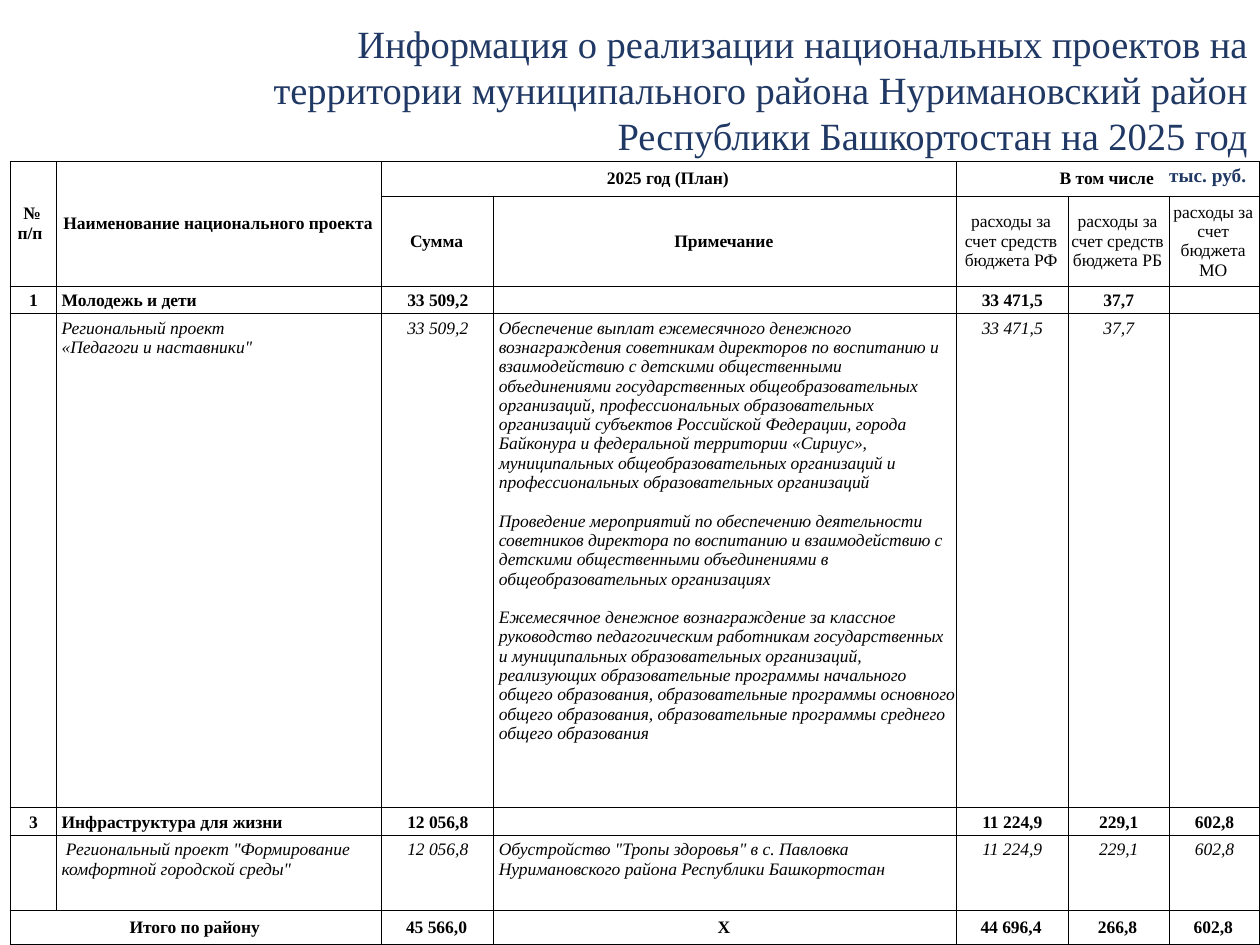
import pptx
import pptx.dml.color
import pptx.enum.text
import pptx.util
from lxml import etree
from pptx.util import Inches

Align = pptx.enum.text.PP_ALIGN
Anchor = pptx.enum.text.MSO_ANCHOR
NAMESPACE = "http://schemas.openxmlformats.org/drawingml/2006/main"

COLUMNS = [0.37, 2.58, 0.89, 3.67, 0.89, 0.8, 0.72]
ROWS = [0.28, 0.71, 0.22, 3.92, 0.22, 0.6, 0.27]
LEFT_COLUMNS = (1, 3)
# Merged areas: top row, left column, bottom row, right column
MERGES = [(0, 0, 1, 0), (0, 1, 1, 1), (0, 2, 0, 3), (0, 4, 0, 6), (6, 0, 6, 1)]

PAYMENT_NOTES = [
    "Обеспечение выплат ежемесячного денежного вознаграждения советникам директоров "
    "по воспитанию и взаимодействию с детскими общественными объединениями "
    "государственных общеобразовательных организаций, профессиональных "
    "образовательных организаций субъектов Российской Федерации, города Байконура и "
    "федеральной территории «Сириус», муниципальных общеобразовательных организаций "
    "и профессиональных образовательных организаций",
    "Проведение мероприятий по обеспечению деятельности советников директора по "
    "воспитанию и взаимодействию с детскими общественными объединениями в "
    "общеобразовательных организациях",
    "Ежемесячное денежное вознаграждение за классное руководство педагогическим "
    "работникам государственных и муниципальных образовательных организаций, "
    "реализующих образовательные программы начального общего образования, "
    "образовательные программы основного общего образования, образовательные "
    "программы среднего общего образования",
]

# Each row: kind, then the cells; a list holds several paragraphs
TABLE = [
    ("head", ["№ п/п ", "Наименование национального проекта", "2025 год (План)", "",
              "В том числе", "", ""]),
    ("head", ["", "", "Сумма", "Примечание", "расходы за счет средств бюджета РФ",
              "расходы за счет средств бюджета РБ", "расходы за счет бюджета\vМО"]),
    ("project", ["1", "Молодежь и дети", "33 509,2", "", "33 471,5", "37,7", ""]),
    ("detail", ["", ["Региональный проект", "«Педагоги и наставники\""], "33 509,2",
                PAYMENT_NOTES, "33 471,5", "37,7", ""]),
    ("project", ["3", "Инфраструктура для жизни", "12 056,8", "", "11 224,9",
                 "229,1", "602,8"]),
    ("detail", ["", " Региональный проект \"Формирование комфортной городской среды\"",
                "12 056,8",
                "Обустройство \"Тропы здоровья\" в с. Павловка Нуримановского района "
                "Республики Башкортостан", "11 224,9", "229,1", "602,8"]),
    ("total", ["Итого по району", "", "45 566,0", "Х", "44 696,4", "266,8", "602,8"]),
]


def color(value):
    return pptx.dml.color.RGBColor.from_string(value)


class SlideBuilder:
    font_name = "Times New Roman"
    accent = "203864"
    ink = "000000"
    table_size = 10

    def __init__(self, page):
        self.page = page

    def style(self, para, size, tint, bold=False, italic=False):
        font = para.font
        font.name, font.size = self.font_name, pptx.util.Pt(size)
        font.bold, font.italic = bold, italic
        font.color.rgb = color(tint)

    def text(self, left, top, width, height, words, size, align, bold=False, wrap=True):
        box = self.page.shapes.add_textbox(*map(Inches, (left, top, width, height)))
        box.text_frame.word_wrap = wrap
        para = box.text_frame.paragraphs[0]
        para.text, para.alignment = words, align
        self.style(para, size, self.accent, bold)

    def borders(self, cell):
        properties = cell._tc.get_or_add_tcPr()
        for position, side in enumerate(("lnL", "lnR", "lnT", "lnB")):
            line = etree.Element(f"{{{NAMESPACE}}}{side}", w="6350")
            fill = etree.SubElement(line, f"{{{NAMESPACE}}}solidFill")
            etree.SubElement(fill, f"{{{NAMESPACE}}}srgbClr", val=self.ink)
            properties.insert(position, line)

    def cell(self, cell, content, left_aligned, middle, bold, italic, gap):
        cell.margin_left = Inches(0.04 if left_aligned else 0)
        cell.margin_top = Inches(0 if middle else 0.04)
        cell.margin_right = Inches(0.02 if middle else 0)
        cell.margin_bottom = 0
        cell.vertical_anchor = Anchor.MIDDLE if middle else Anchor.TOP
        cell.fill.background()
        self.borders(cell)
        lines = content if isinstance(content, list) else [content]
        for number, words in enumerate(lines):
            frame = cell.text_frame
            para = frame.add_paragraph() if number else frame.paragraphs[0]
            para.alignment = Align.LEFT if left_aligned else Align.CENTER
            if number and gap:
                para.space_before = pptx.util.Pt(gap)
            self.style(para, self.table_size, self.ink, bold, italic)
            if words:
                para.text = words
            else:
                # Keeps an empty cell from stretching its row
                etree.SubElement(para._p, f"{{{NAMESPACE}}}endParaRPr",
                                 sz=str(self.table_size * 100))

    def table(self, left, top):
        size = (Inches(sum(COLUMNS)), Inches(sum(ROWS)))
        table = self.page.shapes.add_table(
            len(ROWS), len(COLUMNS), Inches(left), Inches(top), *size).table
        table.first_row = table.horz_banding = False
        for column, width in zip(table.columns, COLUMNS):
            column.width = Inches(width)
        for row, height in zip(table.rows, ROWS):
            row.height = Inches(height)
        for row, (kind, contents) in enumerate(TABLE):
            middle = kind in ("head", "total")
            for column, content in enumerate(contents):
                budget_head = row == 1 and column >= 4
                self.cell(table.cell(row, column), content,
                          left_aligned=not middle and column in LEFT_COLUMNS,
                          middle=middle,
                          bold=kind != "detail" and not budget_head,
                          italic=kind == "detail",
                          gap=11 if content is PAYMENT_NOTES else 0)
        for first_row, first_column, last_row, last_column in MERGES:
            table.cell(first_row, first_column).merge(table.cell(last_row, last_column))


def main():
    deck = pptx.Presentation()
    deck.slide_width, deck.slide_height = Inches(10), Inches(7.5)
    builder = SlideBuilder(deck.slides.add_slide(deck.slide_layouts[6]))

    # Title
    builder.text(
        1.5, 0.11, 8.5, 0.7,
        "Информация о реализации национальных проектов на территории муниципального "
        "района Нуримановский район Республики Башкортостан на 2025 год",
        22, Align.RIGHT)

    # Unit of measure
    builder.text(9.18, 1.25, 0.82, 0.29, "тыс. руб.", 11, Align.LEFT,
                 bold=True, wrap=False)

    # Projects and their funding
    builder.table(0.08, 1.28)

    deck.save("out.pptx")


if __name__ == "__main__":
    main()
